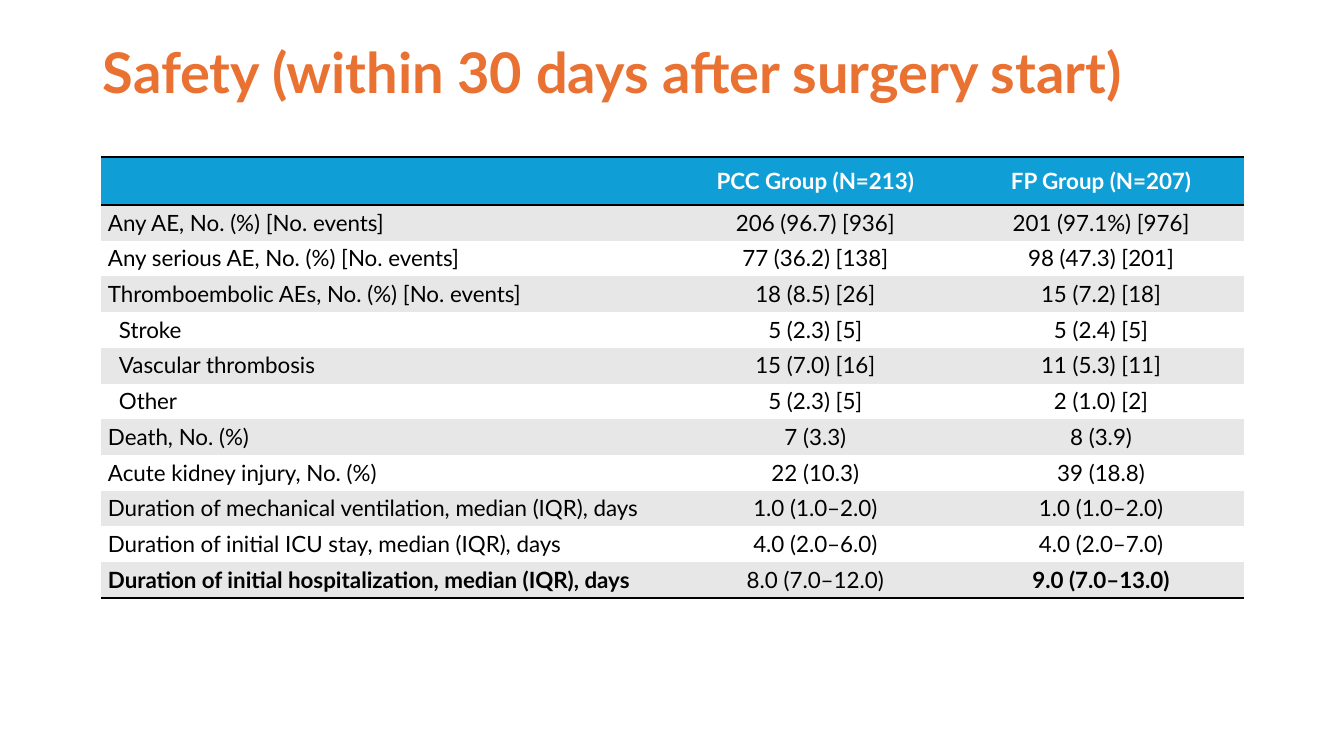
import pptx
import pptx.dml.color
import pptx.enum.text
import pptx.oxml
import pptx.oxml.ns
import pptx.util

PX = 12192000 / 1344
FONT = "Lato"
BLACK, WHITE, ORANGE, BLUE, GREY = "000000", "FFFFFF", "E97132", "0F9ED5", "E7E7E7"
NO_STYLE = "{2D5ABB26-0587-4C30-8999-92F81FD0307C}"
CENTER = pptx.enum.text.PP_ALIGN.CENTER
LEFT = pptx.enum.text.PP_ALIGN.LEFT

HEADER = ("", "PCC Group (N=213)", "FP Group (N=207)")
ROWS = [
    ("Any AE, No. (%) [No. events]", "206 (96.7) [936]", "201 (97.1%) [976]"),
    ("Any serious AE, No. (%) [No. events]", "77 (36.2) [138]", "98 (47.3) [201]"),
    ("Thromboembolic AEs, No. (%) [No. events]", "18 (8.5) [26]", "15 (7.2) [18]"),
    ("Stroke", "5 (2.3) [5]", "5 (2.4) [5]"),
    ("Vascular thrombosis", "15 (7.0) [16]", "11 (5.3) [11]"),
    ("Other", "5 (2.3) [5]", "2 (1.0) [2]"),
    ("Death, No. (%)", "7 (3.3)", "8 (3.9)"),
    ("Acute kidney injury, No. (%)", "22 (10.3)", "39 (18.8)"),
    ("Duration of mechanical ventilation, median (IQR), days", "1.0 (1.0–2.0)", "1.0 (1.0–2.0)"),
    ("Duration of initial ICU stay, median (IQR), days", "4.0 (2.0–6.0)", "4.0 (2.0–7.0)"),
    ("Duration of initial hospitalization, median (IQR), days", "8.0 (7.0–12.0)", "9.0 (7.0–13.0)"),
]
INDENTED = {"Stroke", "Vascular thrombosis", "Other"}
BOLD = {ROWS[-1][0], ROWS[-1][2]}


def px(n):
    return pptx.util.Emu(round(n * PX))


def rgb(color):
    return pptx.dml.color.RGBColor.from_string(color)


def add_run(p, text, size, color, bold):
    r = p.add_run()
    r.text = text
    r.font.name = FONT
    r.font.size = pptx.util.Pt(size)
    r.font.bold = bold
    r.font.color.rgb = rgb(color)


def add_borders(cell, sides):
    # Border lines come before the fill in the cell properties
    tcPr = cell._tc.get_or_add_tcPr()
    for i, side in enumerate(sides):
        tcPr.insert(i, pptx.oxml.parse_xml(
            f'<a:ln{side} {pptx.oxml.ns.nsdecls("a")} w="{pptx.util.Pt(2)}">'
            f'<a:solidFill><a:srgbClr val="{BLACK}"/></a:solidFill></a:ln{side}>'))


def fill_cell(cell, text, color, fill, align, bold):
    cell.fill.solid()
    cell.fill.fore_color.rgb = rgb(fill)
    p = cell.text_frame.paragraphs[0]
    p.alignment = align
    if text:
        add_run(p, text, 16, color, bold)
    return p


def add_title(slide, x, y, w, h):
    sp = slide.shapes.add_textbox(px(x), px(y), px(w), px(h))
    tf = sp.text_frame
    tf.word_wrap = True
    p = tf.paragraphs[0]
    p.line_spacing = 0.9
    add_run(p, "Safety (within 30 days after surgery start)", 40, ORANGE, True)


def add_safety_table(slide, x, y, w, h):
    frame = slide.shapes.add_table(len(ROWS) + 1, 3, px(x), px(y), px(w), px(h))
    table = frame.table
    table.first_row = table.horz_banding = False
    table._tbl.tblPr.find(pptx.oxml.ns.qn("a:tableStyleId")).text = NO_STYLE

    # Label column takes half the width, the two groups a quarter each
    for col, share in zip(table.columns, (2, 1, 1)):
        col.width = px(w * share / 4)
    header_h = 48
    for i, row in enumerate(table.rows):
        row.height = px((h - header_h) / len(ROWS) if i else header_h)

    # Header
    for c, text in enumerate(HEADER):
        cell = table.cell(0, c)
        cell.vertical_anchor = pptx.enum.text.MSO_ANCHOR.MIDDLE
        fill_cell(cell, text, WHITE, BLUE, CENTER, True)
        add_borders(cell, "TB")

    # Banded body
    for r, values in enumerate(ROWS, 1):
        for c, text in enumerate(values):
            cell = table.cell(r, c)
            cell.margin_left = cell.margin_right = px(7)
            cell.margin_top = cell.margin_bottom = 0
            p = fill_cell(cell, text, BLACK, GREY if r % 2 else WHITE,
                          CENTER if c else LEFT, text in BOLD)
            p.line_spacing = 1.15
            p.space_after = pptx.util.Pt(10)
            if text in INDENTED:
                p._p.get_or_add_pPr().set("marL", str(px(11)))
            if r == len(ROWS):
                add_borders(cell, "B")


def main():
    prs = pptx.Presentation()
    prs.slide_width, prs.slide_height = px(1344), px(756)
    slide = prs.slides.add_slide(prs.slide_layouts[6])
    add_title(slide, 93, 40, 1159, 146)
    add_safety_table(slide, 101, 157, 1143, 441)
    prs.save("out.pptx")


if __name__ == "__main__":
    main()
